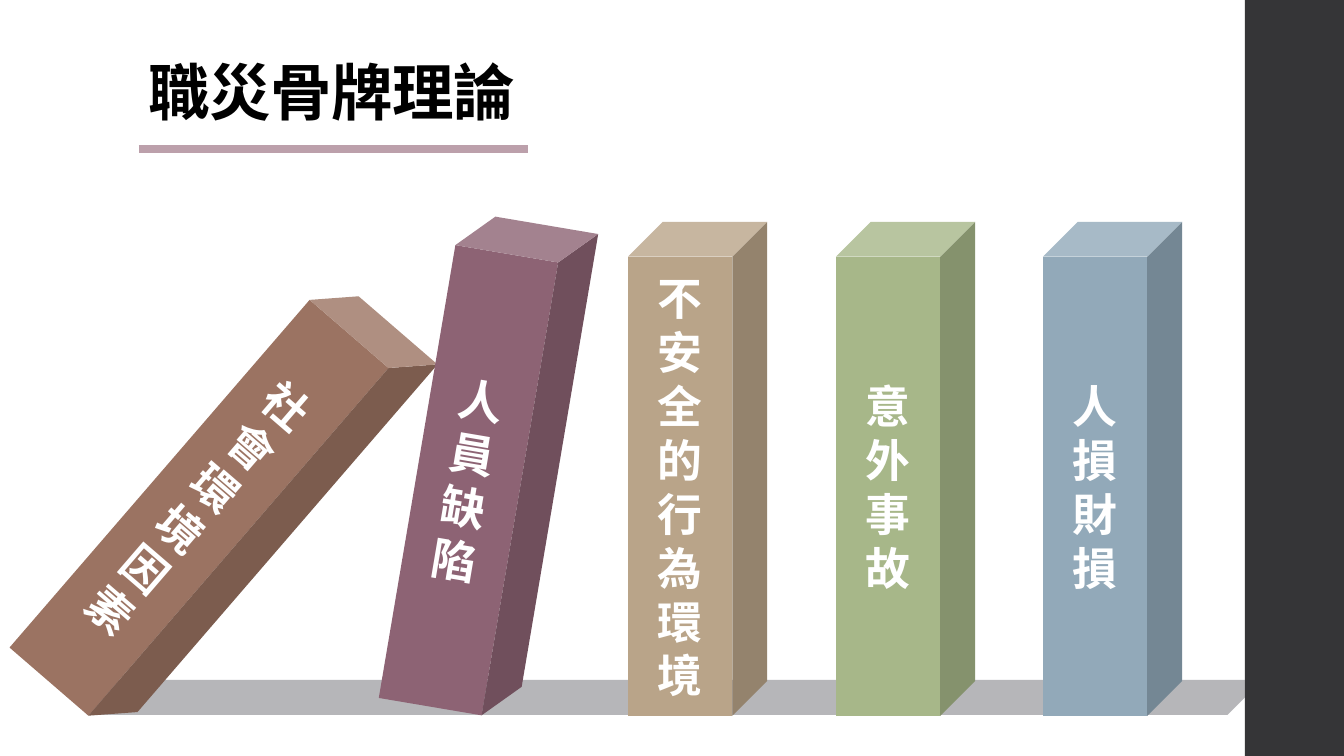
from lxml import etree
from pptx import Presentation
from pptx import util as u
from pptx.dml.color import RGBColor
from pptx.enum import shapes, text
from pptx.oxml import ns

PX = 914400 / 100.8
FONT = "Noto Sans CJK SC"
COLOURS = {
    "sidebar": "353537", "underline": "BCA0AB", "floor": "6F6F74",
    "title": "000000", "label": "FFFFFF",
    "brown": "9B7362", "purple": "8D6374", "tan": "B9A489",
    "green": "A7B789", "blue": "92A9B9",
}


def add_block(kind, box, colour):
    shape = slide.shapes.add_shape(kind, *[round(n * PX) for n in box])
    shape.shadow.inherit = False
    shape.fill.solid()
    shape.fill.fore_color.rgb = RGBColor.from_string(COLOURS[colour])
    shape.line.fill.background()
    return shape


def write(shape, content, size, colour, align, spacing, tracking=0):
    frame = shape.text_frame
    frame.word_wrap = True
    frame.vertical_anchor = text.MSO_ANCHOR.MIDDLE
    for number, line in enumerate(content.split("\n")):
        paragraph = frame.add_paragraph() if number else frame.paragraphs[0]
        paragraph.alignment = align
        paragraph.line_spacing = spacing
        run = paragraph.add_run()
        run.text = line
        run.font.size = u.Pt(size)
        run.font.bold = True
        run.font.name = FONT
        run.font.color.rgb = RGBColor.from_string(COLOURS[colour])
        properties = run.font._element
        etree.SubElement(properties, ns.qn("a:ea"), typeface=FONT)
        if tracking:
            properties.set("spc", str(tracking))


presentation = Presentation()
presentation.slide_width = round(1344 * PX)
presentation.slide_height = round(756 * PX)
slide = presentation.slides.add_slide(presentation.slide_layouts[6])

add_block(shapes.MSO_SHAPE.RECTANGLE, (1245, 0, 99, 756), "sidebar")

underline = slide.shapes.add_connector(
    shapes.MSO_CONNECTOR.STRAIGHT, *[round(n * PX) for n in (139, 149, 528, 149)])
underline.line.color.rgb = RGBColor.from_string(COLOURS["underline"])
underline.line.width = u.Pt(6)
etree.SubElement(underline._element.spPr, ns.qn("a:effectLst"))

floor = add_block(shapes.MSO_SHAPE.SNIP_2_DIAG_RECTANGLE, (87, 680, 1158, 35), "floor")
floor.adjustments[0] = 0.5
floor.adjustments[1] = 0
floor_colour = floor._element.spPr.find(ns.qn("a:solidFill"))[0]
etree.SubElement(floor_colour, ns.qn("a:alpha"), val="50000")

title = slide.shapes.add_textbox(*[round(n * PX) for n in (139, 40, 1068, 112)])
write(title, "職災骨牌理論", size=44, colour="title",
      align=text.PP_ALIGN.LEFT, spacing=0.9, tracking=-50)

dominoes = [
    ("社會環境因素", 154, 259, 40.8, "brown"),
    ("人員缺陷", 419, 219, 9.6, "purple"),
    ("不安全的行為環境", 628, 222, 0, "tan"),
    ("意外事故", 836, 222, 0, "green"),
    ("人損\n財損", 1043, 222, 0, "blue"),
]
for label, left, top, angle, colour in dominoes:
    domino = add_block(shapes.MSO_SHAPE.CUBE, (left, top, 139, 494), colour)
    domino.rotation = angle
    write(domino, label, size=32, colour="label",
          align=text.PP_ALIGN.CENTER, spacing=u.Pt(38.5))

presentation.save("out.pptx")
